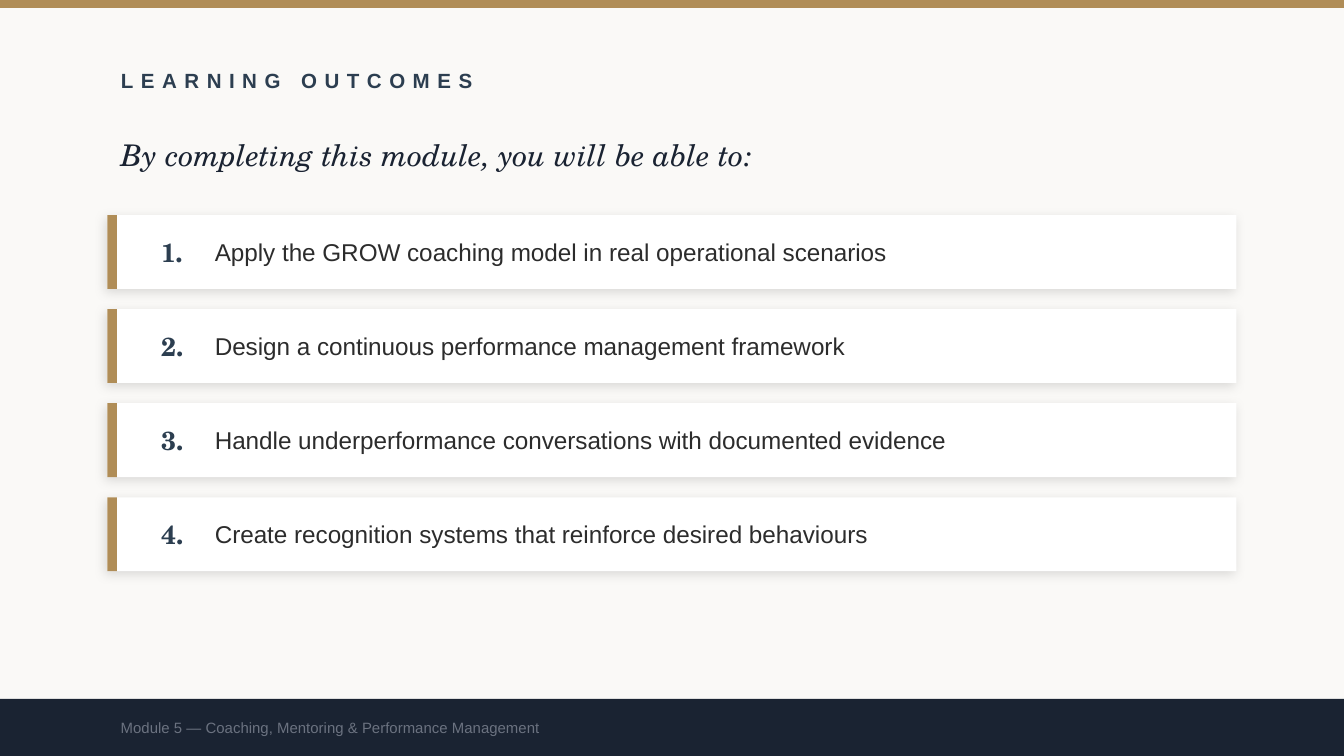
from lxml import etree
from pptx import Presentation, util as u
from pptx.dml.color import RGBColor
from pptx.enum import shapes, text
from pptx.oxml.ns import qn

Pt = u.Pt
SANS, SERIF = "Arial", "TeX Gyre Schola"
GOLD, NAVY, SLATE = "B08D57", "1A2332", "2C3E50"
WIDTH, HEIGHT = 720, 405
LEFT, TEXT_W = 57.6, 576
CARD_TOP, CARD_W, CARD_H, CARD_PITCH = 115.2, 604.8, 39.6, 50.4
FOOTER_TOP = 374.4

OUTCOMES = [
    "Apply the GROW coaching model in real operational scenarios",
    "Design a continuous performance management framework",
    "Handle underperformance conversations with documented evidence",
    "Create recognition systems that reinforce desired behaviours",
]


def paint(fill, color):
    fill.solid()
    fill.fore_color.rgb = RGBColor.from_string(color)


def add_bar(s, x, y, w, h, color):
    sp = s.shapes.add_shape(shapes.MSO_SHAPE.RECTANGLE, Pt(x), Pt(y), Pt(w), Pt(h))
    sp.shadow.inherit = False
    paint(sp.fill, color)
    sp.line.fill.background()
    return sp


def add_soft_shadow(sp):
    effects = sp._element.spPr.find(qn("a:effectLst"))
    shadow = etree.SubElement(effects, qn("a:outerShdw"), blurRad=str(Pt(6)),
                              dist=str(Pt(2)), dir=str(135 * 60000),
                              algn="bl", rotWithShape="0")
    color = etree.SubElement(shadow, qn("a:srgbClr"), val="000000")
    etree.SubElement(color, qn("a:alpha"), val="12000")


def write(sp, words, size, font, color, bold=False, italic=False, spacing=0):
    tf = sp.text_frame
    tf.word_wrap = True
    tf.auto_size = text.MSO_AUTO_SIZE.NONE
    tf.vertical_anchor = text.MSO_ANCHOR.MIDDLE
    p = tf.paragraphs[0]
    p.alignment = text.PP_ALIGN.LEFT
    r = p.add_run()
    r.text = words
    r.font.size, r.font.name = Pt(size), font
    r.font.bold, r.font.italic = bold, italic
    paint(r.font.fill, color)
    if spacing:
        r._r.get_or_add_rPr().set("spc", str(spacing * 100))


def add_label(s, x, y, w, h, *args, **style):
    write(s.shapes.add_textbox(Pt(x), Pt(y), Pt(w), Pt(h)), *args, **style)


def add_title(s, words):
    sp = s.shapes.title
    sp.left, sp.top, sp.width, sp.height = Pt(LEFT), Pt(28.8), Pt(TEXT_W), Pt(28.8)
    write(sp, words, 11, SANS, SLATE, bold=True, spacing=4)


def add_outcome(s, number, words):
    y = CARD_TOP + (number - 1) * CARD_PITCH
    add_soft_shadow(add_bar(s, LEFT, y, CARD_W, CARD_H, "FFFFFF"))
    add_bar(s, LEFT, y, 5.04, CARD_H, GOLD)
    add_label(s, 79.2, y, 28.8, CARD_H, f"{number}.", 14, SERIF, SLATE, bold=True)
    add_label(s, 108, y, 532.8, CARD_H, words, 13, SANS, "2C2C2C")


def main():
    prs = Presentation()
    prs.slide_width, prs.slide_height = Pt(WIDTH), Pt(HEIGHT)
    s = prs.slides.add_slide(prs.slide_layouts[5])
    paint(s.background.fill, "FAF9F7")

    # Top band and headings
    add_bar(s, 0, 0, WIDTH, 4.32, GOLD)
    add_title(s, "LEARNING OUTCOMES")
    add_label(s, LEFT, 64.8, TEXT_W, 36, "By completing this module, you will be able to:",
              16, SERIF, NAVY, italic=True)

    # Numbered outcome cards
    for number, words in enumerate(OUTCOMES, 1):
        add_outcome(s, number, words)

    # Footer
    footer_h = HEIGHT - FOOTER_TOP
    add_bar(s, 0, FOOTER_TOP, WIDTH, footer_h, NAVY)
    add_label(s, LEFT, FOOTER_TOP, TEXT_W, footer_h,
              "Module 5 — Coaching, Mentoring & Performance Management", 8, SANS, "6B7280")

    prs.save("out.pptx")


if __name__ == "__main__":
    main()
